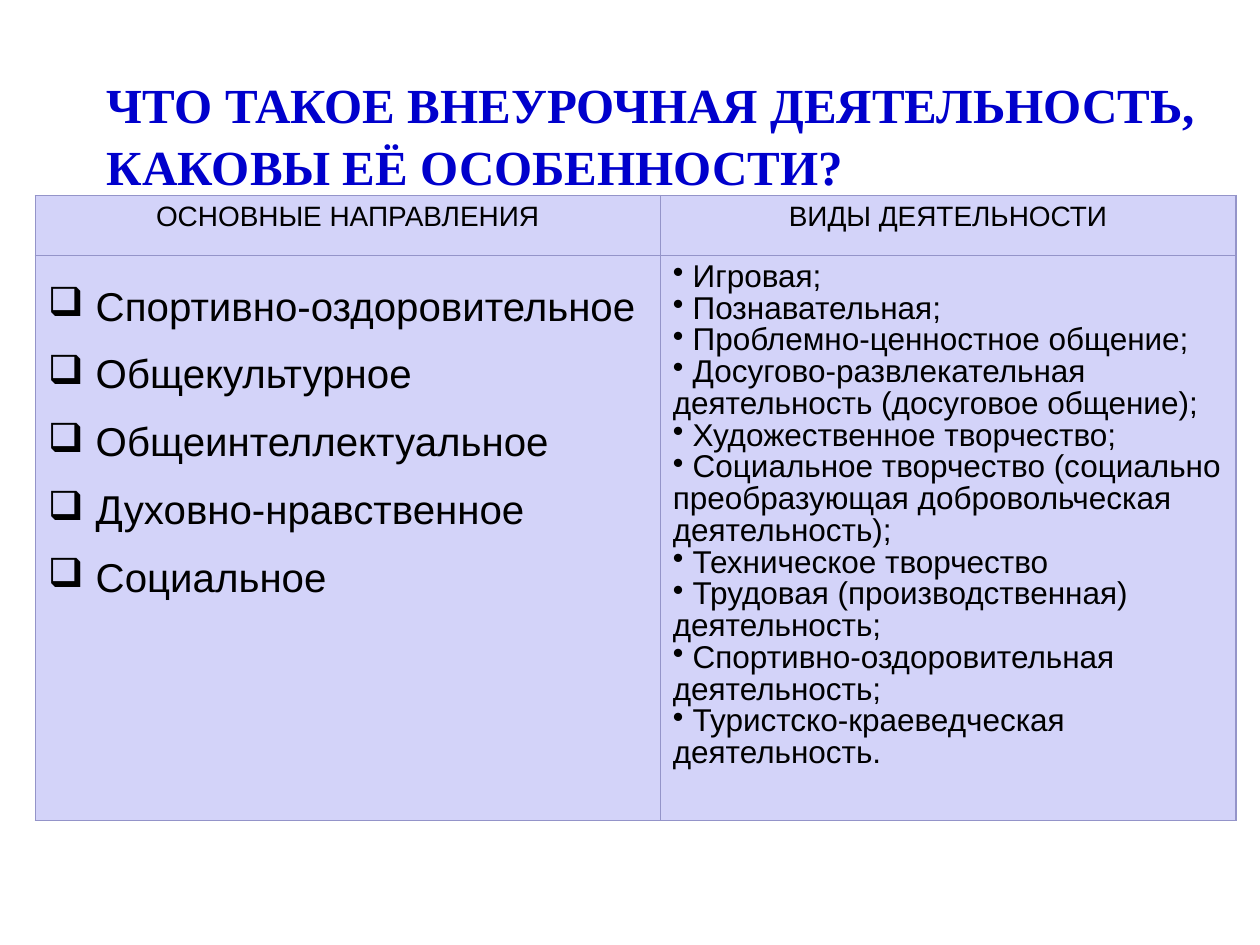
from dataclasses import dataclass

from lxml import etree
from pptx import Presentation
from pptx.dml.color import RGBColor
from pptx.enum.text import MSO_ANCHOR, PP_ALIGN
from pptx.oxml.ns import qn
from pptx.util import Inches, Pt

TITLE = "ЧТО ТАКОЕ ВНЕУРОЧНАЯ ДЕЯТЕЛЬНОСТЬ, КАКОВЫ ЕЁ ОСОБЕННОСТИ?"
HEADERS = ["ОСНОВНЫЕ НАПРАВЛЕНИЯ", "ВИДЫ ДЕЯТЕЛЬНОСТИ"]
DIRECTIONS = [
    "Спортивно-оздоровительное",
    "Общекультурное",
    "Общеинтеллектуальное",
    "Духовно-нравственное",
    "Социальное",
]
# Wrapped lines return to the bullet, so one space parts bullet and text.
ACTIVITIES = [
    " Игровая;",
    " Познавательная;",
    " Проблемно-ценностное общение;",
    " Досугово-развлекательная деятельность (досуговое общение);",
    " Художественное творчество;",
    " Социальное творчество (социально преобразующая добровольческая деятельность);",
    " Техническое творчество",
    " Трудовая (производственная) деятельность;",
    " Спортивно-оздоровительная деятельность;",
    " Туристско-краеведческая деятельность.",
]
COLUMN_WIDTHS = [4.96, 4.57]
ROW_HEIGHTS = [0.48, 4.48]


@dataclass(frozen=True)
class Theme:
    title_font: str = "Times New Roman"
    body_font: str = "Arial"
    title_size: float = 28
    header_size: float = 16
    directions_size: float = 23
    activities_size: float = 18
    title_color: str = "0000CC"
    text_color: str = "000000"
    cell_fill: str = "D3D3F9"
    border_color: str = "9494C9"
    border_width: float = 0.75


THEME = Theme()


def style_font(paragraph, name, size, color, bold=False):
    font = paragraph.font
    font.name, font.size, font.bold = name, Pt(size), bold
    font.color.rgb = RGBColor.from_string(color)


def add_title(slide):
    box = slide.shapes.add_textbox(Inches(0.75), Inches(0.52), Inches(9), Inches(1))
    frame = box.text_frame
    frame.word_wrap = True
    frame.vertical_anchor = MSO_ANCHOR.TOP
    heading = frame.paragraphs[0]
    heading.text = TITLE
    heading.line_spacing = 1.05
    style_font(heading, THEME.title_font, THEME.title_size, THEME.title_color, bold=True)


def style_cell(cell):
    """Draw the four borders, then the fill, in the order the schema asks for."""
    properties = cell._tc.get_or_add_tcPr()
    for side in ("a:lnL", "a:lnR", "a:lnT", "a:lnB"):
        line = etree.SubElement(properties, qn(side), w=str(Pt(THEME.border_width)))
        solid = etree.SubElement(line, qn("a:solidFill"))
        etree.SubElement(solid, qn("a:srgbClr"), val=THEME.border_color)
    cell.fill.solid()
    cell.fill.fore_color.rgb = RGBColor.from_string(THEME.cell_fill)


def fill_cell(cell, lines, size, align=PP_ALIGN.LEFT, spacing=1.0, bullet=None, hanging=0):
    frame = cell.text_frame
    for index, line in enumerate(lines):
        paragraph = frame.add_paragraph() if index else frame.paragraphs[0]
        paragraph.text = line
        paragraph.alignment = align
        paragraph.line_spacing = spacing
        style_font(paragraph, THEME.body_font, size, THEME.text_color)
        if bullet:
            add_bullet(paragraph, bullet, hanging)


def add_bullet(paragraph, character, hanging):
    properties = paragraph._p.get_or_add_pPr()
    properties.set("marL", str(Inches(hanging)))
    properties.set("indent", str(-Inches(hanging)))
    mark = etree.Element(qn("a:buChar"), char=character)
    properties.find(qn("a:defRPr")).addprevious(mark)


def add_directions_table(slide):
    table = slide.shapes.add_table(
        len(ROW_HEIGHTS), len(COLUMN_WIDTHS), Inches(0.28), Inches(1.55),
        Inches(sum(COLUMN_WIDTHS)), Inches(sum(ROW_HEIGHTS)),
    ).table
    table.horz_banding = False
    for column, width in zip(table.columns, COLUMN_WIDTHS):
        column.width = Inches(width)
    for row, height in zip(table.rows, ROW_HEIGHTS):
        row.height = Inches(height)
    for cell in table.iter_cells():
        style_cell(cell)

    for column, header in enumerate(HEADERS):
        fill_cell(table.cell(0, column), [header], THEME.header_size, PP_ALIGN.CENTER)
    fill_cell(table.cell(1, 0), DIRECTIONS, THEME.directions_size,
              spacing=1.5, bullet="❑", hanging=0.38)
    fill_cell(table.cell(1, 1), ACTIVITIES, THEME.activities_size,
              spacing=0.9, bullet="•")


def main():
    presentation = Presentation()
    presentation.slide_width, presentation.slide_height = Inches(10), Inches(7.5)
    slide = presentation.slides.add_slide(presentation.slide_layouts[6])
    add_title(slide)
    add_directions_table(slide)
    presentation.save("out.pptx")


if __name__ == "__main__":
    main()
